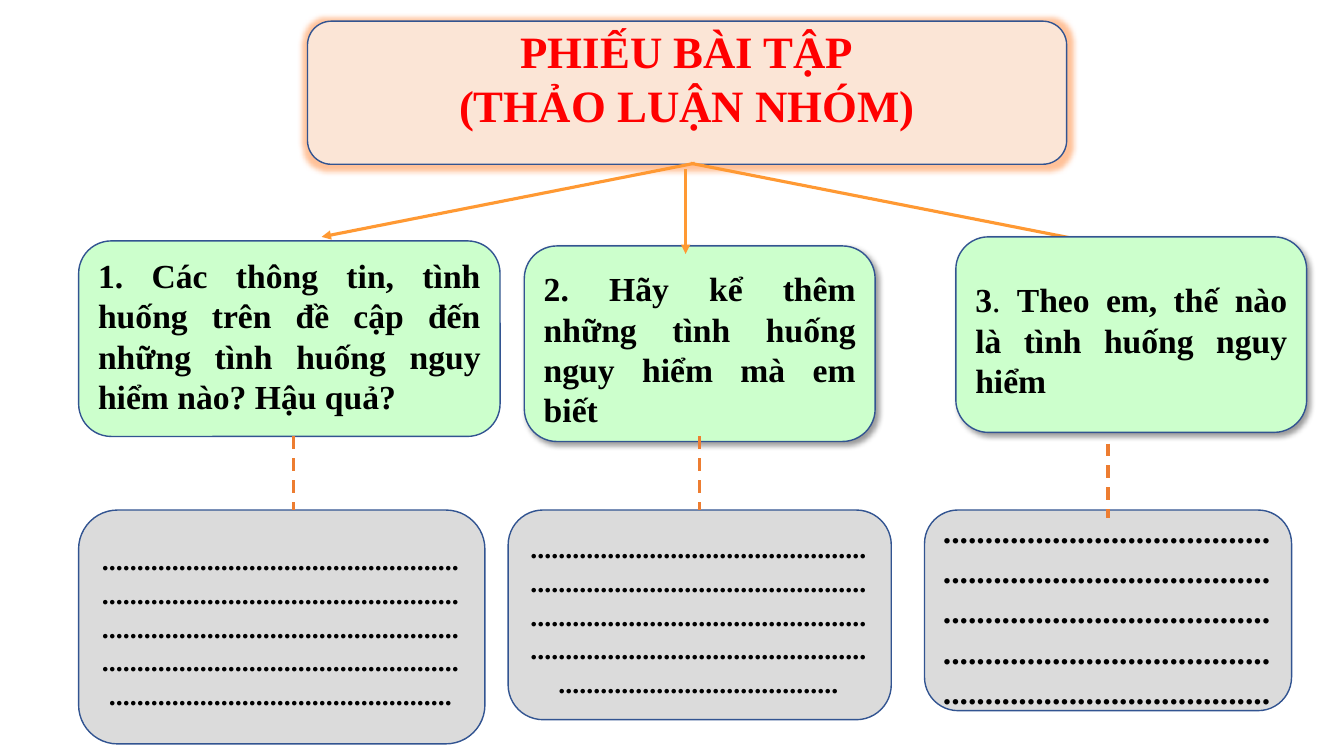
from lxml import etree
from pptx import Presentation
from pptx.dml.color import RGBColor
from pptx.enum.dml import MSO_LINE
from pptx.enum.shapes import MSO_CONNECTOR, MSO_SHAPE
from pptx.enum.text import MSO_ANCHOR, MSO_AUTO_SIZE, PP_ALIGN
from pptx.oxml import parse_xml
from pptx.oxml.ns import qn
from pptx.util import Pt

# Content: boxes are (left, top, width, height) in px, 100 px to the inch
PX = 9144
FONT = "Times New Roman"
TITLE = ["PHIẾU BÀI TẬP", "(THẢO LUẬN NHÓM)"]
TITLE_BOX = (305, 21, 753, 142)
# box, runs of (text, bold), top inset, bottom inset, shadow
ASKS = [
    ((78, 239, 418, 194),
     [("1. Các thông tin, tình huống trên đề cập đến những tình huống "
       "nguy hiểm nào? Hậu quả?", True)], 2, 8, False),
    ((520, 244, 348, 194),
     [("2. Hãy kể thêm những tình huống nguy hiểm mà em biết", True)],
     10, 0, True),
    ((948, 235, 348, 194),
     [("3", True), (". ", False),
      ("Theo em, thế nào là tình huống nguy hiểm", True)], 10, 0, True),
]
# box, number of dots, text size, side inset
BLANKS = [
    ((78, 506, 403, 232), 253, 20, 10),
    ((504, 506, 380, 208), 232, 20, 12),
    ((917, 506, 364, 199), 195, 24, 7),
]
# start x, start y, end x, end y
ARROWS = [(685, 162, 1092, 242), (689, 162, 319, 235), (680, 168, 680, 252)]
DASHES = [(291, 433, 291, 506), (694, 433, 694, 506), (1099, 440, 1099, 514)]

GLOW = ('<a:glow {} rad="101600"><a:srgbClr val="FF6600">'
        '<a:alpha val="40000"/></a:srgbClr></a:glow>')
SHADE = ('<a:outerShdw {} blurRad="50800" dist="38100" dir="2700000" '
         'algn="tl" rotWithShape="0"><a:srgbClr val="000000">'
         '<a:alpha val="40000"/></a:srgbClr></a:outerShdw>')
NS = 'xmlns:a="http://schemas.openxmlformats.org/drawingml/2006/main"'


def color(code):
    return RGBColor.from_string(code)


def effect(shape, xml=""):
    props = shape._element.spPr
    for old in props.findall(qn("a:effectLst")):
        props.remove(old)
    group = etree.SubElement(props, qn("a:effectLst"))
    if xml:
        group.append(parse_xml(xml.format(NS)))


def style(run, size, code="000000", bold=True, slant=False):
    font = run.font
    font.name, font.size = FONT, Pt(size)
    font.bold, font.italic = bold, slant
    font.color.rgb = color(code)


def frame(shape, top=5, low=5, side=10):
    text = shape.text_frame
    text.word_wrap = True
    text.auto_size = MSO_AUTO_SIZE.NONE
    text.vertical_anchor = MSO_ANCHOR.MIDDLE
    text.margin_top, text.margin_bottom = top * PX, low * PX
    text.margin_left = text.margin_right = side * PX
    return text


def panel(box, fill, xml=""):
    shape = shapes.add_shape(MSO_SHAPE.ROUNDED_RECTANGLE,
                             *(v * PX for v in box))
    shape.fill.solid()
    shape.fill.fore_color.rgb = color(fill)
    shape.line.color.rgb = color("325491")
    shape.line.width = Pt(1)
    effect(shape, xml)
    return shape


def ask(box, parts, top, low, shade):
    shape = panel(box, "CCFFCC", SHADE if shade else "")
    para = frame(shape, top, low).paragraphs[0]
    para.alignment = PP_ALIGN.JUSTIFY
    for words, bold in parts:
        run = para.add_run()
        run.text = words
        style(run, 24, bold=bold)


def blank(box, count, size, side):
    shape = panel(box, "DBDBDB")
    para = frame(shape, side=side).paragraphs[0]
    para.text = "." * count
    para.alignment = PP_ALIGN.CENTER
    style(para.runs[0], size, slant=True)
    return shape


def link(ends, code):
    line = shapes.add_connector(MSO_CONNECTOR.STRAIGHT,
                                *(v * PX for v in ends))
    line.line.color.rgb = color(code)
    line.line.width = Pt(2.25)
    effect(line)
    return line


def arrow(ends):
    line = link(ends, "FF9933")
    etree.SubElement(line.line._get_or_add_ln(), qn("a:tailEnd"),
                     type="triangle")


deck = Presentation()
deck.slide_width, deck.slide_height = 1333 * PX, 750 * PX
slide = deck.slides.add_slide(deck.slide_layouts[5])
shapes = slide.shapes

# Title text over a glowing rounded box
title = shapes.title
title.left, title.top, title.width, title.height = (v * PX for v in TITLE_BOX)
text = frame(title, 0, 30)
text.text = "\n".join(TITLE)
for para in text.paragraphs:
    para.alignment = PP_ALIGN.CENTER
    style(para.runs[0], 32, "FF0000")
plate = panel(TITLE_BOX, "FBE5D6", GLOW)
title._element.addprevious(plate._element)

# Questions, answer boxes and links; the third question covers its arrow
arrow(ARROWS[0])
for item in ASKS[:2]:
    ask(*item)
answers = [blank(*item) for item in BLANKS]
for ends in ARROWS[1:]:
    arrow(ends)
dashes = [link(ends, "ED7D31") for ends in DASHES]
for dash in dashes:
    dash.line.dash_style = MSO_LINE.DASH
dashes[1].end_connect(answers[1], 0)
ask(*ASKS[2])

deck.save("out.pptx")
